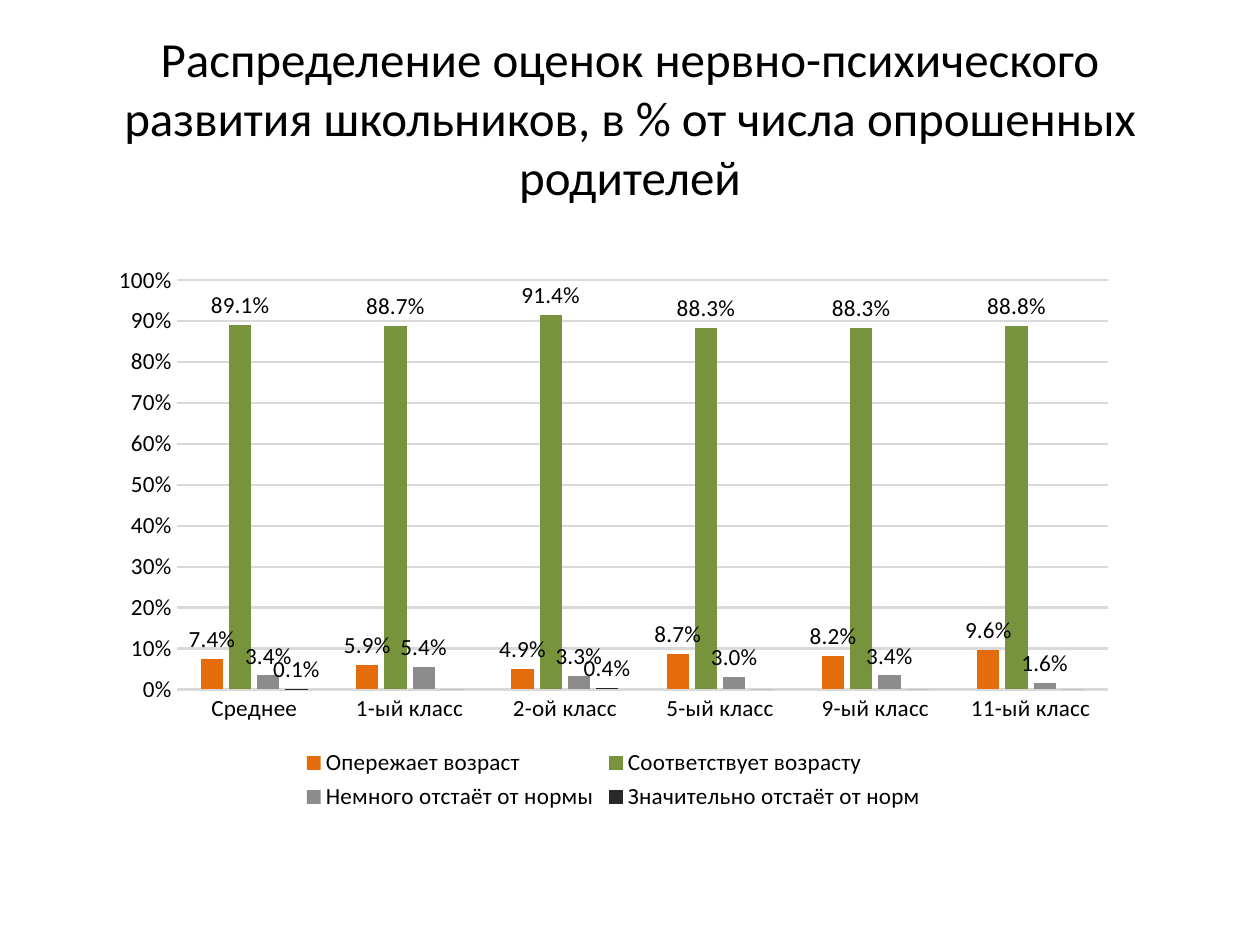
from lxml import etree
from pptx import Presentation
from pptx.chart.data import CategoryChartData
from pptx.dml.color import RGBColor
from pptx.enum import chart as chart_enum, text as text_enum
from pptx.oxml import ns
from pptx.util import Inches, Pt

FONT = "Calibri"
BLACK = RGBColor(0x00, 0x00, 0x00)
GRID_GREY = RGBColor(0xD9, 0xD9, 0xD9)
ORANGE = RGBColor(0xE4, 0x6C, 0x0A)
GREEN = RGBColor(0x77, 0x93, 0x3C)
GREY = RGBColor(0x8C, 0x8C, 0x8C)
DARK = RGBColor(0x29, 0x29, 0x29)

TITLE = ("Распределение оценок нервно-психического развития школьников, "
         "в % от числа опрошенных родителей")
CATEGORIES = ["Среднее", "1-ый класс", "2-ой класс",
              "5-ый класс", "9-ый класс", "11-ый класс"]
RATINGS = [
    ("Опережает возраст", ORANGE, (0.074, 0.059, 0.049, 0.087, 0.082, 0.096)),
    ("Соответствует возрасту", GREEN, (0.891, 0.887, 0.914, 0.883, 0.883, 0.888)),
    ("Немного отстаёт от нормы", GREY, (0.034, 0.054, 0.033, 0.03, 0.034, 0.016)),
    ("Значительно отстаёт от норм", DARK, (0.001, 0, 0.004, 0, 0, 0)),
]


def set_font(font, size, color=BLACK):
    font.name = FONT
    font.size = Pt(size)
    font.bold = False
    font.color.rgb = color


def add_text(slide, content, left, top, width, height, *, size, color=BLACK,
             align=text_enum.PP_ALIGN.CENTER, anchor=text_enum.MSO_ANCHOR.MIDDLE):
    box = slide.shapes.add_textbox(Inches(left), Inches(top), Inches(width), Inches(height))
    frame = box.text_frame
    frame.word_wrap = True
    frame.vertical_anchor = anchor
    paragraph = frame.paragraphs[0]
    paragraph.text = content
    paragraph.alignment = align
    set_font(paragraph.runs[0].font, size, color)


def style_line(line):
    line.color.rgb = GRID_GREY
    line.width = Pt(1.25)


def style_axes(chart):
    for axis in (chart.category_axis, chart.value_axis):
        axis.major_tick_mark = chart_enum.XL_TICK_MARK.NONE
        axis.minor_tick_mark = chart_enum.XL_TICK_MARK.NONE
    style_line(chart.category_axis.format.line)

    value_axis = chart.value_axis
    value_axis.minimum_scale = 0
    value_axis.maximum_scale = 1
    value_axis.major_unit = 0.1
    value_axis.tick_labels.number_format = "0%"
    value_axis.tick_labels.number_format_is_linked = False
    value_axis.format.line.fill.background()
    style_line(value_axis.major_gridlines.format.line)


def style_series(series, color):
    series.format.fill.solid()
    series.format.fill.fore_color.rgb = color
    series.invert_if_negative = False
    labels = series.data_labels
    labels.show_value = True
    labels.number_format = "0.0%"
    labels.number_format_is_linked = False
    labels.position = chart_enum.XL_LABEL_POSITION.OUTSIDE_END

    # Zero values carry no label
    zeros = [index for index, value in enumerate(series.values) if value == 0]
    for place, index in enumerate(zeros):
        label = etree.Element(ns.qn("c:dLbl"))
        etree.SubElement(label, ns.qn("c:idx"), val=str(index))
        etree.SubElement(label, ns.qn("c:delete"), val="1")
        labels._element.insert(place, label)


def add_ratings_chart(slide, left, top, width, height):
    data = CategoryChartData(number_format="0.0%")
    data.categories = CATEGORIES
    for name, _, values in RATINGS:
        data.add_series(name, values)
    chart = slide.shapes.add_chart(
        chart_enum.XL_CHART_TYPE.COLUMN_CLUSTERED,
        Inches(left), Inches(top), Inches(width), Inches(height), data).chart
    set_font(chart.font, 13.2)
    chart.has_title = False
    chart.has_legend = True
    chart.legend.position = chart_enum.XL_LEGEND_POSITION.BOTTOM
    chart.legend.include_in_layout = False

    plot = chart.plots[0]
    plot.vary_by_categories = False
    plot.gap_width = 219
    plot.overlap = -27
    style_axes(chart)
    for series, (_, color, _) in zip(plot.series, RATINGS):
        style_series(series, color)


def main():
    presentation = Presentation()
    presentation.slide_width = Inches(10)
    presentation.slide_height = Inches(7.5)
    slide = presentation.slides.add_slide(presentation.slide_layouts[6])

    # Title
    add_text(slide, TITLE, 0.5, 0.3, 9, 1.25, size=28)

    # Ratings by school year
    add_ratings_chart(slide, 0.78, 2.02, 8.18, 4.46)

    presentation.save("out.pptx")


if __name__ == "__main__":
    main()
